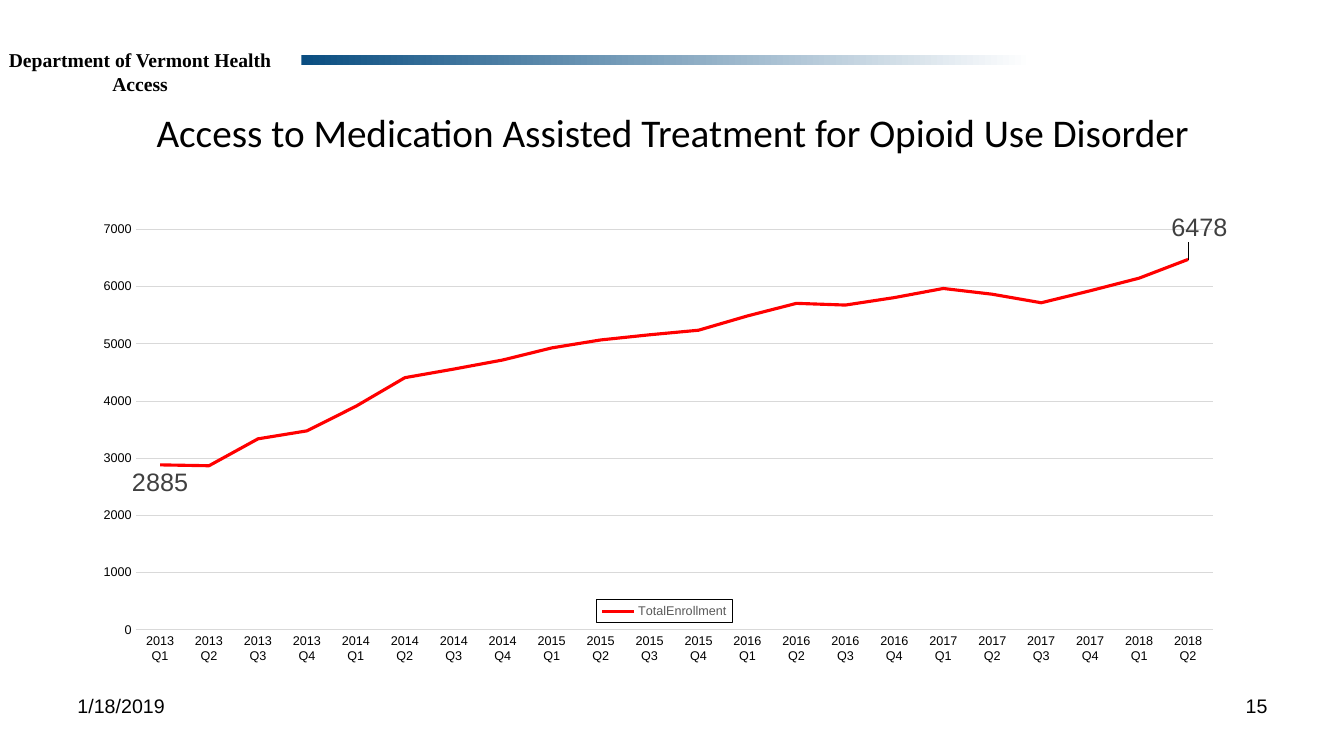
from dataclasses import dataclass

from lxml.etree import SubElement
from pptx import Presentation
from pptx.chart.data import CategoryChartData
from pptx.dml.color import RGBColor
from pptx.enum.chart import XL_CHART_TYPE as ChartType
from pptx.enum.chart import XL_LABEL_POSITION as LabelPos
from pptx.enum.chart import XL_LEGEND_POSITION as LegendPos
from pptx.enum.chart import XL_TICK_MARK as Tick
from pptx.enum.shapes import MSO_SHAPE as Shape
from pptx.enum.text import MSO_ANCHOR as Anchor
from pptx.enum.text import PP_ALIGN as Align
from pptx.oxml import parse_xml
from pptx.oxml.ns import nsdecls, qn
from pptx.util import Inches, Pt


@dataclass(frozen=True)
class Theme:
    black: RGBColor = RGBColor.from_string("000000")
    white: RGBColor = RGBColor.from_string("FFFFFF")
    navy: RGBColor = RGBColor.from_string("0A4E81")
    red: RGBColor = RGBColor.from_string("FF0000")
    grid: RGBColor = RGBColor.from_string("D9D9D9")
    legend: RGBColor = RGBColor.from_string("595959")
    label: RGBColor = RGBColor.from_string("404040")
    title_font: str = "Calibri"
    header_font: str = "Times New Roman"
    body_font: str = "Arial"
    title_size: int = 28
    text_size: int = 14
    chart_size: int = 10
    axis_size: int = 9
    label_size: int = 18


@dataclass(frozen=True)
class Label:
    text: str
    left: float
    top: float
    width: float
    height: float
    align: Align
    font: str
    bold: bool = False


@dataclass(frozen=True)
class Callout:
    point: int
    position: LabelPos
    dx: float
    dy: float


THEME = Theme()
LABELS = [
    Label("Department of Vermont Health Access", -0.11, 0.43, 3, 0.57,
          Align.CENTER, THEME.header_font, True),
    Label("1/18/2019", 0.67, 6.83, 3.11, 0.52, Align.LEFT, THEME.body_font),
    Label("15", 9.56, 6.83, 3.11, 0.52, Align.RIGHT, THEME.body_font),
]
ENROLLMENT = [
    2885, 2870, 3340, 3480, 3910, 4410, 4560, 4720, 4930, 5070, 5160,
    5240, 5490, 5710, 5680, 5810, 5970, 5870, 5720, 5930, 6150, 6478,
]
QUARTERS = [f"{2013 + i // 4} Q{i % 4 + 1}" for i in range(len(ENROLLMENT))]
CALLOUTS = [
    Callout(0, LabelPos.BELOW, 0, 0),
    Callout(len(ENROLLMENT) - 1, LabelPos.ABOVE, 0.01, -0.03),
]


def style(font, name: str, size: int, color: RGBColor, bold: bool = False) -> None:
    font.name, font.size, font.bold = name, Pt(size), bold
    font.color.rgb = color


def layout_xml(**parts):
    layout = parse_xml(f"<c:layout {nsdecls('c')}><c:manualLayout/></c:layout>")
    for tag, value in parts.items():
        SubElement(layout[0], qn(f"c:{tag}")).set("val", str(value))
    return layout


def add_label(slide, label: Label) -> None:
    box = slide.shapes.add_textbox(Inches(label.left), Inches(label.top),
                                   Inches(label.width), Inches(label.height))
    tf = box.text_frame
    tf.word_wrap = True
    p = tf.paragraphs[0]
    p.text, p.alignment = label.text, label.align
    style(p.font, label.font, THEME.text_size, THEME.black, label.bold)


def add_header_bar(slide) -> None:
    bar = slide.shapes.add_shape(Shape.RECTANGLE, Inches(2.99), Inches(0.55),
                                 Inches(7.25), Inches(0.1))
    bar.shadow.inherit = False
    bar.line.fill.background()
    bar.fill.gradient()
    bar.fill.gradient_angle = 0
    for stop, color in zip(bar.fill.gradient_stops, (THEME.navy, THEME.white)):
        stop.color.rgb = color


def set_title(slide, text: str) -> None:
    title = slide.shapes.title
    title.left, title.top = Inches(0.67), Inches(1.02)
    title.width, title.height = Inches(12), Inches(1.19)
    tf = title.text_frame
    tf.text, tf.vertical_anchor = text, Anchor.TOP
    p = tf.paragraphs[0]
    p.alignment = Align.CENTER
    style(p.font, THEME.title_font, THEME.title_size, THEME.black)


def format_axes(chart) -> None:
    category, value = chart.category_axis, chart.value_axis
    for axis in (category, value):
        axis.major_tick_mark = axis.minor_tick_mark = Tick.NONE
        style(axis.tick_labels.font, THEME.body_font, THEME.axis_size, THEME.black)
    value.minimum_scale, value.maximum_scale, value.major_unit = 0, 7000, 1000
    value.has_major_gridlines = True
    value.format.line.fill.background()
    for line in (category.format.line, value.major_gridlines.format.line):
        line.color.rgb, line.width = THEME.grid, Pt(0.75)


def format_legend(chart) -> None:
    chart.has_legend = True
    legend = chart.legend
    legend.position = LegendPos.BOTTOM
    legend.include_in_layout = False
    style(legend.font, THEME.body_font, THEME.axis_size, THEME.legend)
    el = chart.element.find(f".//{qn('c:legend')}")
    for old in el.findall(qn("c:layout")):
        el.remove(old)
    el.find(qn("c:legendPos")).addnext(
        layout_xml(xMode="edge", yMode="edge", x=0.44, y=0.86, w=0.12, h=0.05))
    el.find(qn("c:overlay")).addnext(parse_xml(
        f"<c:spPr {nsdecls('c', 'a')}><a:ln w='9525'><a:solidFill>"
        f"<a:srgbClr val='{THEME.black}'/></a:solidFill></a:ln></c:spPr>"))


def add_callout(chart, series, callout: Callout) -> None:
    label = series.points[callout.point].data_label
    style(label.font, THEME.body_font, THEME.label_size, THEME.label)
    label.position = callout.position
    if callout.dx or callout.dy:
        idx = chart.element.xpath(f".//c:dLbl/c:idx[@val='{callout.point}']")[0]
        idx.addnext(layout_xml(x=callout.dx, y=callout.dy))


def add_enrollment_chart(slide) -> None:
    data = CategoryChartData()
    data.categories = QUARTERS
    data.add_series("TotalEnrollment", ENROLLMENT)
    chart = slide.shapes.add_chart(ChartType.LINE, Inches(0.95), Inches(2.12),
                                   Inches(11.28), Inches(4.46), data).chart
    chart.has_title = False
    style(chart.font, THEME.body_font, THEME.chart_size, THEME.black)
    format_axes(chart)
    format_legend(chart)
    plot = chart.plots[0]
    plot.vary_by_categories = False
    series = plot.series[0]
    series.smooth = False
    series.format.line.color.rgb = THEME.red
    series.format.line.width = Pt(2.25)
    for callout in CALLOUTS:
        add_callout(chart, series, callout)
    area = chart.element.find(f".//{qn('c:plotArea')}")
    for old in area.findall(qn("c:layout")):
        area.remove(old)
    area.insert(0, layout_xml(layoutTarget="inner", xMode="edge", yMode="edge",
                              x=0.035, y=0.035, w=0.947, h=0.892))


def main() -> None:
    prs = Presentation()
    prs.slide_width, prs.slide_height = Inches(13.33), Inches(7.5)
    s = prs.slides.add_slide(prs.slide_layouts[5])
    add_header_bar(s)
    for label in LABELS:
        add_label(s, label)
    add_enrollment_chart(s)
    set_title(s, "Access to Medication Assisted Treatment for Opioid Use Disorder")
    prs.save("out.pptx")


if __name__ == "__main__":
    main()
